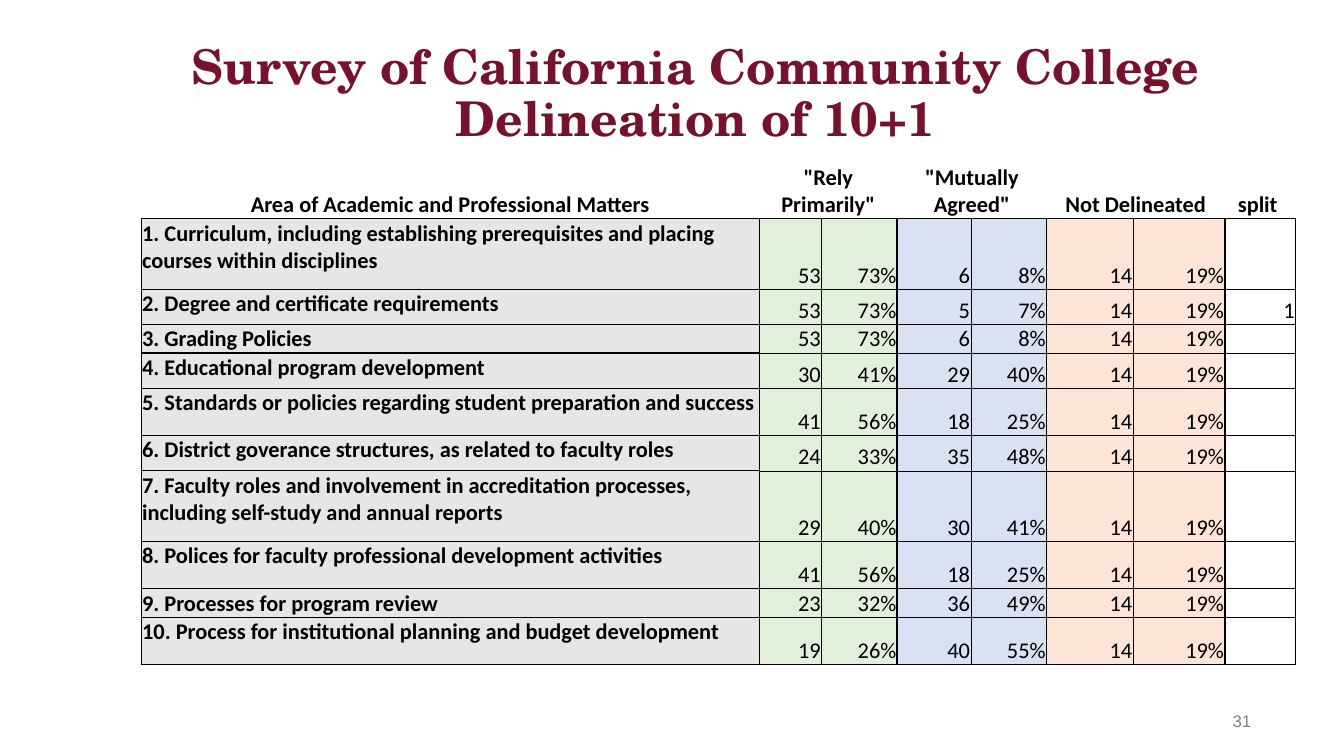
from lxml.etree import SubElement
from pptx import Presentation
from pptx.dml.color import RGBColor
from pptx.enum.text import MSO_ANCHOR, PP_ALIGN
from pptx.oxml.ns import qn
from pptx.util import Inches, Pt

TITLE = "Survey of California Community College Delineation of 10+1"
HEADERS = {0: "Area of Academic and Professional Matters", 1: '"Rely Primarily"',
           3: '"Mutually Agreed"', 5: "Not Delineated", 7: "split "}
# Area, rely primarily, mutually agreed, split
SURVEY = [
    ("1. Curriculum, including establishing prerequisites and placing courses within disciplines", 53, 6, ""),
    ("2. Degree and certificate requirements", 53, 5, "1"),
    ("3. Grading Policies", 53, 6, ""),
    ("4. Educational program development", 30, 29, ""),
    ("5. Standards or policies regarding student preparation and success", 41, 18, ""),
    ("6. District goverance structures, as related to faculty roles", 24, 35, ""),
    ("7. Faculty roles and involvement in accreditation processes, including self-study and annual reports",
     29, 30, ""),
    ("8. Polices for faculty professional development activities", 41, 18, ""),
    ("9. Processes for program review", 23, 36, ""),
    ("10. Process for institutional planning and budget development", 19, 40, ""),
]
NOT_DELINEATED = 14
COLLEGES = 73
COLUMN_WIDTHS = [6.13, 0.62, 0.75, 0.73, 0.75, 0.86, 0.91, 0.7]
ROW_HEIGHTS = [0.68, 0.7, 0.35, 0.28, 0.35, 0.47, 0.35, 0.7, 0.47, 0.28, 0.47]
COLUMN_FILLS = ["E7E6E6", "E2EFDA", "E2EFDA", "D9E1F2", "D9E1F2", "FCE4D6", "FCE4D6", None]
GROUP_STARTS = (3, 5, 7)
NO_STYLE = "{2D5ABB26-0587-4C30-8999-92F81FD0307C}"


def color(hex_value):
    return RGBColor.from_string(hex_value)


def style(font, name, size, hex_value, bold=False):
    font.name, font.size, font.bold = name, Pt(size), bold
    font.color.rgb = color(hex_value)


def add_title(slide, left, top, width, height):
    title = slide.shapes.title
    title.left, title.top, title.width, title.height = map(Inches, (left, top, width, height))
    title.text_frame.word_wrap = True
    title.text_frame.vertical_anchor = MSO_ANCHOR.MIDDLE
    paragraph = title.text_frame.paragraphs[0]
    paragraph.alignment = PP_ALIGN.CENTER
    paragraph.line_spacing = 0.9
    run = paragraph.add_run()
    run.text = TITLE
    style(run.font, "TeX Gyre Schola", 34.2, "75122E", bold=True)


def set_borders(cell, widths):
    """Draw the left, right, top and bottom borders; zero means none."""
    properties = cell._tc.get_or_add_tcPr()
    for side, width in zip("LRTB", widths):
        line = SubElement(properties, qn(f"a:ln{side}"), w=str(Pt(width)))
        if width:
            fill = SubElement(line, qn("a:solidFill"))
            SubElement(fill, qn("a:srgbClr"), val="000000")
        else:
            SubElement(line, qn("a:noFill"))


def fill_cell(cell, text, alignment, anchor, bold, fill, borders):
    set_borders(cell, borders)
    cell.margin_left = cell.margin_right = cell.margin_top = Inches(0.01)
    cell.margin_bottom = 0
    cell.vertical_anchor = anchor
    if fill:
        cell.fill.solid()
        cell.fill.fore_color.rgb = color(fill)
    else:
        cell.fill.background()
    paragraph = cell.text_frame.paragraphs[0]
    paragraph.alignment = alignment
    if text:
        run = paragraph.add_run()
        run.text = text
        style(run.font, "Calibri", 16, "000000", bold)
    else:
        paragraph.font.size = Pt(16)


def body_borders(row, column):
    top = 1 if row == 1 else 0.5
    if column == 0:
        return 0.5, 0.5, 1, 1
    left = 1.5 if column in GROUP_STARTS else 0.5
    right = 1.5 if column + 1 in GROUP_STARTS else 0.5
    return left, right, top, 0.5


def add_survey_table(slide, left, top, width, height):
    frame = slide.shapes.add_table(len(ROW_HEIGHTS), len(COLUMN_WIDTHS),
                                   *map(Inches, (left, top, width, height)))
    table = frame.table
    table.first_row = table.horz_banding = False
    table._tbl.tblPr.find(qn("a:tableStyleId")).text = NO_STYLE
    for column, column_width in zip(table.columns, COLUMN_WIDTHS):
        column.width = Inches(column_width)
    for row, row_height in zip(table.rows, ROW_HEIGHTS):
        row.height = Inches(row_height)

    # Header row, with each count and percentage pair under one heading
    for column in range(len(COLUMN_WIDTHS)):
        fill_cell(table.cell(0, column), HEADERS.get(column, ""), PP_ALIGN.CENTER,
                  MSO_ANCHOR.BOTTOM, True, None, (0, 0, 0, 1))
    for column in (1, 3, 5):
        table.cell(0, column).merge(table.cell(0, column + 1))

    # Survey rows
    for row, (area, rely, mutual, split) in enumerate(SURVEY, start=1):
        texts = [area]
        for count in (rely, mutual, NOT_DELINEATED):
            texts += [str(count), f"{count / COLLEGES:.0%}"]
        for column, text in enumerate(texts + [split]):
            is_area = column == 0
            fill_cell(table.cell(row, column), text,
                      PP_ALIGN.LEFT if is_area else PP_ALIGN.RIGHT,
                      MSO_ANCHOR.TOP if is_area else MSO_ANCHOR.BOTTOM,
                      is_area, COLUMN_FILLS[column], body_borders(row, column))


def add_page_number(slide, left, top, width, height):
    text_frame = slide.shapes.add_textbox(*map(Inches, (left, top, width, height))).text_frame
    text_frame.word_wrap = True
    text_frame.margin_right = 0
    text_frame.vertical_anchor = MSO_ANCHOR.MIDDLE
    paragraph = text_frame.paragraphs[0]
    paragraph.alignment = PP_ALIGN.RIGHT
    run = paragraph.add_run()
    run.text = "31"
    style(run.font, "Arial", 12, "7F7F7F")


def main():
    presentation = Presentation()
    presentation.slide_width = Inches(13.33)
    presentation.slide_height = Inches(7.5)
    slide = presentation.slides.add_slide(presentation.slide_layouts[5])
    add_title(slide, 1.4, 0.4, 10.99, 1.09)
    add_survey_table(slide, 1.4, 1.49, sum(COLUMN_WIDTHS), sum(ROW_HEIGHTS))
    add_page_number(slide, 11.41, 6.95, 1, 0.4)
    presentation.save("out.pptx")


if __name__ == "__main__":
    main()
